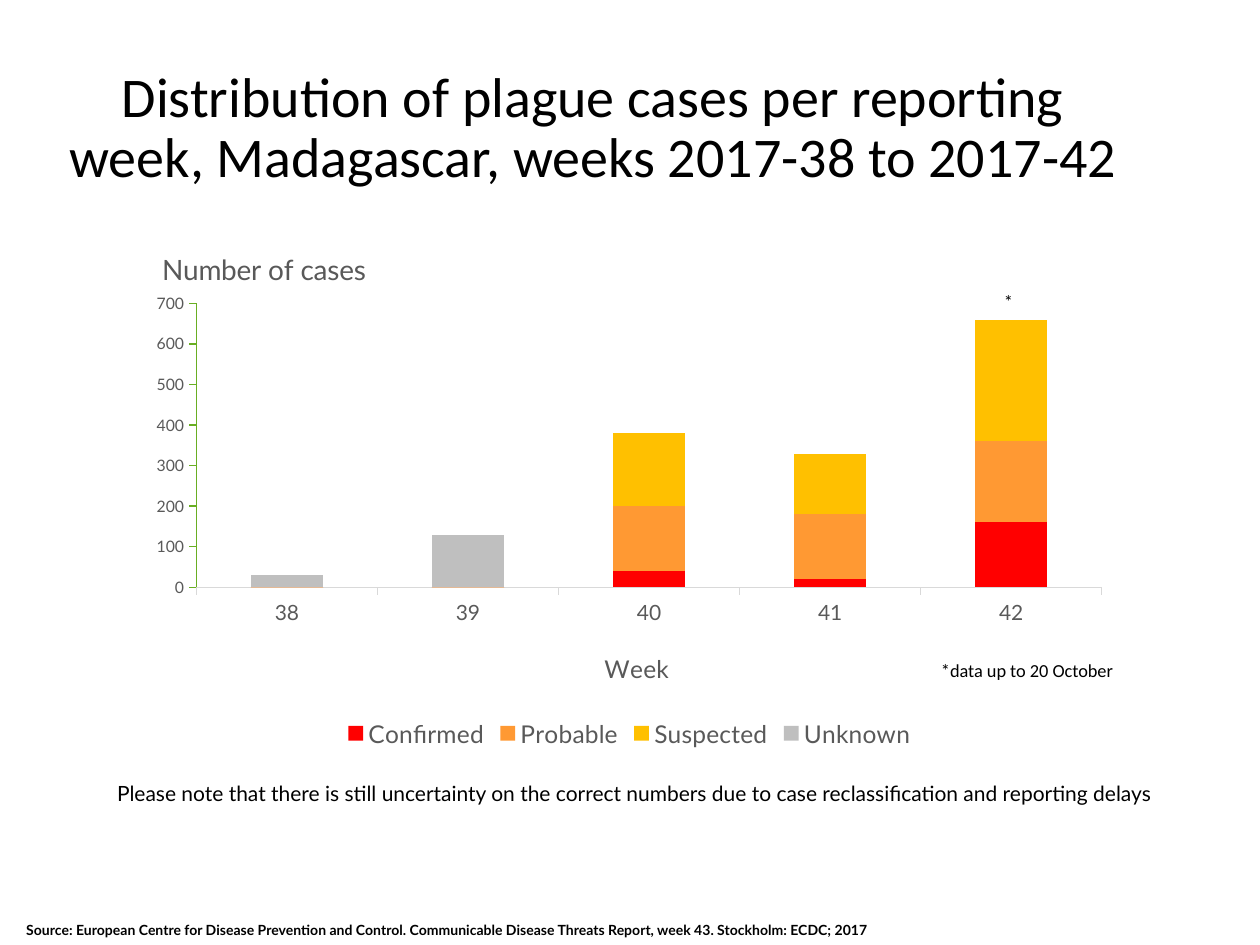
"""Build a slide with a stacked column chart of plague cases per reporting week."""
import lxml.etree
import pptx
import pptx.chart.data
import pptx.dml.color
import pptx.enum.chart
import pptx.enum.text
import pptx.oxml.ns
import pptx.util
from pptx.util import Cm


def style_font(font, size, color, name="Lato", bold=False):
    font.size = pptx.util.Pt(size)
    font.color.rgb = pptx.dml.color.RGBColor.from_string(color)
    font.name = name
    font.bold = bold


def place_manually(parent, index, **values):
    qn = pptx.oxml.ns.qn
    for old_layout in parent.findall(qn("c:layout")):
        parent.remove(old_layout)
    layout = lxml.etree.Element(qn("c:layout"))
    manual = lxml.etree.SubElement(layout, qn("c:manualLayout"))
    for tag, value in values.items():
        lxml.etree.SubElement(manual, qn("c:" + tag)).set("val", str(value))
    parent.insert(index, layout)


BLACK, GRAY = "000000", "595959"

presentation = pptx.Presentation()
presentation.slide_width, presentation.slide_height = Cm(25.4), Cm(19.05)
slide = presentation.slides.add_slide(presentation.slide_layouts[5])

title = slide.shapes.title
title.left, title.top, title.width, title.height = Cm(1.04), Cm(1.04), Cm(21.84), Cm(4.42)
title_frame = title.text_frame
title_frame.word_wrap = True
title_frame.auto_size = pptx.enum.text.MSO_AUTO_SIZE.NONE
title_frame.vertical_anchor = pptx.enum.text.MSO_ANCHOR.TOP
title_frame.margin_top = Cm(0.35)
paragraph = title_frame.paragraphs[0]
paragraph.alignment = pptx.enum.text.PP_ALIGN.CENTER
paragraph.line_spacing = 0.9
run = paragraph.add_run()
run.text = "Distribution of plague cases per reporting week, Madagascar, weeks 2017-38 to 2017-42"
style_font(run.font, 32, BLACK, "Calibri")

cases = [
    ("Confirmed", "FF0000", (0, 0, 40, 20, 160)),
    ("Probable", "FF9933", (0, 0, 160, 160, 200)),
    ("Suspected", "FFC000", (0, 0, 180, 150, 300)),
    ("Unknown", "BFBFBF", (30, 130, 0, 0, 0)),
]
chart_data = pptx.chart.data.CategoryChartData()
chart_data.categories = ["38", "39", "40", "41", "42"]
for name, color, values in cases:
    chart_data.add_series(name, values)
chart = slide.shapes.add_chart(
    pptx.enum.chart.XL_CHART_TYPE.COLUMN_STACKED,
    Cm(2.77), Cm(4.39), Cm(19.84), Cm(10.8), chart_data,
).chart
style_font(chart.font, 10, BLACK)

plot = chart.plots[0]
plot.gap_width, plot.overlap = 150, 100
plot.vary_by_categories = False
for series, (name, color, values) in zip(plot.series, cases):
    series.format.fill.solid()
    series.format.fill.fore_color.rgb = pptx.dml.color.RGBColor.from_string(color)

category_axis, value_axis = chart.category_axis, chart.value_axis
for axis, size, color in [(category_axis, 12, "D9D9D9"), (value_axis, 9, "69AE23")]:
    axis.has_major_gridlines = False
    axis.major_tick_mark = pptx.enum.chart.XL_TICK_MARK.OUTSIDE
    axis.minor_tick_mark = pptx.enum.chart.XL_TICK_MARK.NONE
    axis.format.line.color.rgb = pptx.dml.color.RGBColor.from_string(color)
    axis.format.line.width = pptx.util.Pt(0.75)
    style_font(axis.tick_labels.font, size, GRAY)
value_axis.minimum_scale, value_axis.maximum_scale = 0, 700
value_axis.major_unit = 100

chart.has_title = True
for heading, text, size in [
    (chart.chart_title, "Number of cases", 16),
    (category_axis.axis_title, "Week", 14),
]:
    run = heading.text_frame.paragraphs[0].add_run()
    run.text = text
    style_font(run.font, size, GRAY)

chart.has_legend = True
chart.legend.position = pptx.enum.chart.XL_LEGEND_POSITION.BOTTOM
chart.legend.include_in_layout = False
style_font(chart.legend.font, 14, GRAY)

chart_space = chart.element
place_manually(chart_space.xpath("c:chart/c:title")[0], 1,
               xMode="edge", yMode="edge", x=0.02, y=0.05)
place_manually(chart_space.xpath("c:chart/c:plotArea/c:catAx/c:title")[0], 1,
               xMode="edge", yMode="edge", x=0.47, y=0.8)
place_manually(chart_space.xpath("c:chart/c:plotArea")[0], 0,
               layoutTarget="inner", xMode="edge", yMode="edge",
               x=0.06, y=0.16, w=0.92, h=0.53)

notes = [
    ("Source: European Centre for Disease Prevention and Control. Communicable Disease "
     "Threats Report, week 43. Stockholm: ECDC; 2017",
     (0.28, 18.49, 21.23, 0.56), 8, "Lato", True, True, 0.9),
    ("Please note that there is still uncertainty on the correct numbers due to case "
     "reclassification and reporting delays",
     (2.11, 15.67, 21.89, 0.71), 12, "Lato", False, False, 0.9),
    ("*data up to 20 October", (18.72, 13.21, 4.83, 1.17), 10.5, "Calibri", False, False, 0.9),
    ("*", (19.99, 5.72, 1.4, 0.79), 10.5, "Calibri", False, True, 1.0),
]
for text, box, size, font_name, bold, wraps, spacing in notes:
    text_frame = slide.shapes.add_textbox(*map(Cm, box)).text_frame
    text_frame.word_wrap = wraps
    paragraph = text_frame.paragraphs[0]
    paragraph.line_spacing = spacing
    run = paragraph.add_run()
    run.text = text
    style_font(run.font, size, BLACK, font_name, bold)

presentation.save("out.pptx")
